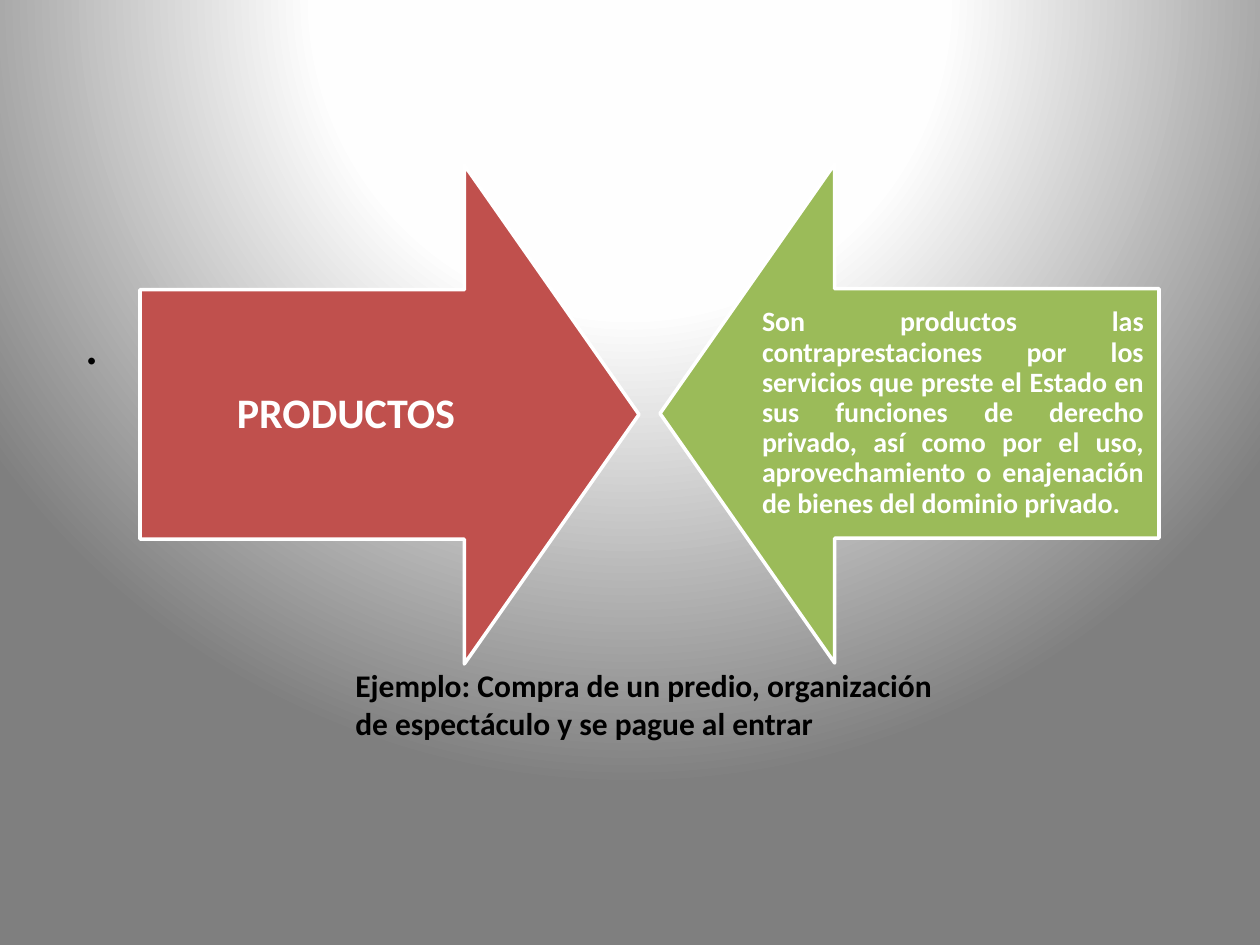
import pptx
import pptx.util
import pptx.dml.color
import pptx.enum.shapes
import pptx.enum.text
import pptx.oxml
import pptx.oxml.ns
import lxml.etree

EMU_PER_PX = 914400 / 126
COLORS = {"red": "C0504D", "green": "9BBB59", "white": "FFFFFF", "black": "000000"}
BACKDROP_STOPS = [(0, "FFFFFF"), (40, "FEFEFE"), (100, "7F7F7F")]
SHAPES = pptx.enum.shapes.MSO_SHAPE
ALIGN = pptx.enum.text.PP_ALIGN


def px(*lengths):
    """Turn pixel lengths into EMU."""
    return [pptx.util.Emu(round(length * EMU_PER_PX)) for length in lengths]


def add_text(frame, text, size, color, bold=True):
    frame.word_wrap = True
    para = frame.paragraphs[0]
    span = para.add_run()
    span.text = text
    span.font.name = "Calibri"
    span.font.size = pptx.util.Pt(size)
    span.font.bold = bold
    span.font.color.rgb = pptx.dml.color.RGBColor.from_string(COLORS[color])
    return para


deck = pptx.Presentation()
deck.slide_width, deck.slide_height = px(1260, 945)
page = deck.slides.add_slide(deck.slide_layouts[1])
title = page.shapes.title.element
title.getparent().remove(title)

# Backdrop: circular gradient centred above the page
backdrop = page.background.fill
backdrop.gradient()
gradient = page.background._cSld.find(".//" + pptx.oxml.ns.qn("a:gradFill"))
for child in list(gradient):
    gradient.remove(child)
stops = "".join(
    f'<a:gs pos="{position * 1000}"><a:srgbClr val="{color}"/></a:gs>'
    for position, color in BACKDROP_STOPS
)
parts = pptx.oxml.parse_xml(
    f'<a:gradFill {pptx.oxml.ns.nsdecls("a")}><a:gsLst>{stops}</a:gsLst>'
    '<a:path path="circle">'
    '<a:fillToRect l="50000" t="-80000" r="50000" b="180000"/></a:path></a:gradFill>'
)
for child in list(parts):
    gradient.append(child)

# Body placeholder
body = page.placeholders[1]
body.left, body.top, body.width, body.height = px(63, 302, 1134, 542)
para = add_text(body.text_frame, ".", 32, "black", bold=False)
para.space_before = pptx.util.Pt(0)
properties = para._p.get_or_add_pPr()
properties.set("marL", str(px(9)[0]))
properties.set("indent", "0")
lxml.etree.SubElement(properties, pptx.oxml.ns.qn("a:buNone"))

# Facing arrows, each with its text: kind, colour, arrow left and top,
# text left, inset, size, alignment, wording
arrows = [
    (SHAPES.RIGHT_ARROW, "red", 140, 165, 140, 24, 24, ALIGN.CENTER, "PRODUCTOS"),
    (SHAPES.LEFT_ARROW, "green", 660, 164, 747, 15, 16, ALIGN.JUSTIFY,
     "Son productos las contraprestaciones por los servicios que preste el Estado "
     "en sus funciones de derecho privado, así como por el uso, aprovechamiento o "
     "enajenación de bienes del dominio privado."),
]
for kind, color, left, top, text_left, inset, size, align, wording in arrows:
    arrow = page.shapes.add_shape(kind, *px(left, top, 499, 499))
    arrow.adjustments[0] = 0.5
    arrow.adjustments[1] = 0.35
    arrow.shadow.inherit = False
    arrow.fill.solid()
    arrow.fill.fore_color.rgb = pptx.dml.color.RGBColor.from_string(COLORS[color])
    arrow.line.color.rgb = pptx.dml.color.RGBColor.from_string(COLORS["white"])
    arrow.line.width = pptx.util.Pt(2)

    box = page.shapes.add_textbox(*px(text_left, top + 125, 412, 249))
    frame = box.text_frame
    frame.vertical_anchor = pptx.enum.text.MSO_ANCHOR.MIDDLE
    frame.margin_left, frame.margin_top, frame.margin_right, frame.margin_bottom = px(
        inset, inset, inset, inset)
    para = add_text(frame, wording, size, "white")
    para.alignment = align
    para.line_spacing = 0.9

example = page.shapes.add_textbox(*px(343, 660, 630, 89))
add_text(
    example.text_frame,
    "Ejemplo: Compra de un predio, organización de espectáculo y se pague al entrar",
    18, "black")

deck.save("out.pptx")
